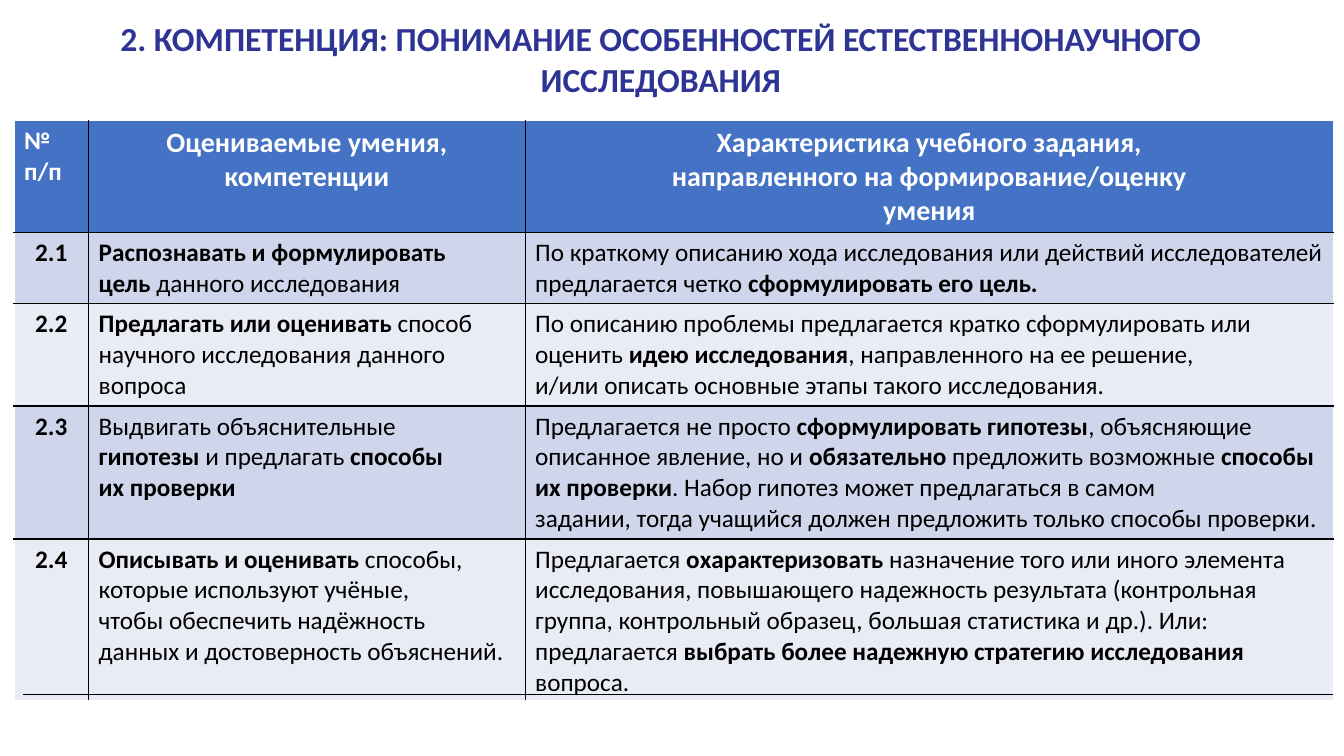
import lxml.etree
import pptx
import pptx.dml.color
import pptx.enum.text
import pptx.oxml.ns
import pptx.util

Pt = pptx.util.Pt
RGBColor = pptx.dml.color.RGBColor
Align = pptx.enum.text.PP_ALIGN
qn = pptx.oxml.ns.qn

INDIGO = RGBColor(0x2D, 0x34, 0x94)
HEADER_BLUE = RGBColor(0x44, 0x72, 0xC4)
BAND_DARK = RGBColor(0xCF, 0xD5, 0xEA)
BAND_LIGHT = RGBColor(0xE9, 0xEB, 0xF5)
WHITE = RGBColor(0xFF, 0xFF, 0xFF)
BLACK = RGBColor(0, 0, 0)

TITLE = "2. КОМПЕТЕНЦИЯ: ПОНИМАНИЕ ОСОБЕННОСТЕЙ ЕСТЕСТВЕННОНАУЧНОГО ИССЛЕДОВАНИЯ"
COLUMN_WIDTHS = [53.3, 311.8, 577.4]
ROW_HEIGHTS = [80, 51, 73, 95, 111]
HEADER = [
    "**№ п/п**",
    "**Оцениваемые умения,**\n**компетенции**",
    "**Характеристика учебного задания,**\n"
    "**направленного на формирование/оценку**\n**умения**",
]
SKILLS = [
    ["**2.1**",
     "**Распознавать и формулировать**\n**цель **данного исследования",
     "По краткому описанию хода исследования или действий исследователей "
     "предлагается четко **сформулировать его цель.**"],
    ["**2.2**",
     "**Предлагать или оценивать **способ\nнаучного исследования данного\nвопроса",
     "По описанию проблемы предлагается кратко сформулировать или оценить "
     "**идею исследования**, направленного на ее решение,\n"
     "и/или описать основные этапы такого исследования."],
    ["**2.3**",
     "Выдвигать объяснительные\n**гипотезы **и предлагать **способы**\n**их проверки**",
     "Предлагается не просто **сформулировать гипотезы**, объясняющие описанное "
     "явление, но и **обязательно** предложить возможные **способы**\n"
     "**их проверки**. Набор гипотез может предлагаться в самом\n"
     "задании, тогда учащийся должен предложить только способы проверки."],
    ["**2.4**",
     "**Описывать и оценивать **способы,\nкоторые используют учёные,\n"
     "чтобы обеспечить надёжность\nданных и достоверность объяснений.",
     "Предлагается **охарактеризовать** назначение того или иного элемента "
     "исследования, повышающего надежность результата (контрольная группа, "
     "контрольный образец, большая статистика и др.). Или: предлагается "
     "**выбрать более надежную стратегию исследования **вопроса."],
]


def write_text(frame, text, *, font, size, color, align=Align.LEFT):
    for index, line in enumerate(text.split("\n")):
        para = frame.add_paragraph() if index else frame.paragraphs[0]
        para.alignment = align
        for position, part in enumerate(line.split("**")):
            if part:
                span = para.add_run()
                span.text = part
                span.font.name = font
                span.font.size = Pt(size)
                span.font.bold = position % 2 == 1
                span.font.color.rgb = color


class Page:
    font = "Calibri"
    line_width = 1

    def __init__(self, deck):
        self.slide = deck.slides.add_slide(deck.slide_layouts[6])

    def title(self, text, left, top, width, height):
        box = self.slide.shapes.add_textbox(Pt(left), Pt(top), Pt(width), Pt(height))
        box.text_frame.word_wrap = True
        write_text(box.text_frame, f"**{text}**", font=self.font, size=24,
                   color=INDIGO, align=Align.CENTER)

    def table(self, rows, left, top, widths, heights):
        table = self.slide.shapes.add_table(
            len(rows), len(widths), Pt(left), Pt(top),
            Pt(sum(widths)), Pt(sum(heights))).table
        for column, width in zip(table.columns, widths):
            column.width = Pt(width)
        for row, height in zip(table.rows, heights):
            row.height = Pt(height)
        last_row, last_column = len(rows) - 1, len(widths) - 1
        for r, texts in enumerate(rows):
            for c, text in enumerate(texts):
                cell = table.cell(r, c)
                outer_edges = {"L": c == 0, "R": c == last_column,
                               "T": r == 0, "B": r == last_row}
                self.borders(cell, outer_edges)
                cell.fill.solid()
                band = BAND_DARK if r % 2 else BAND_LIGHT
                cell.fill.fore_color.rgb = band if r else HEADER_BLUE
                centered = (r == 0) != (c == 0)
                write_text(cell.text_frame, text, font=self.font,
                           size=20 if r == 0 and c else 18,
                           color=BLACK if r else WHITE,
                           align=Align.CENTER if centered else Align.LEFT)

    def borders(self, cell, outer_edges):
        properties = cell._tc.get_or_add_tcPr()
        for side, outer in outer_edges.items():
            edge = lxml.etree.SubElement(properties, qn(f"a:ln{side}"),
                                         w=str(Pt(self.line_width)))
            fill = lxml.etree.SubElement(edge, qn("a:solidFill"))
            lxml.etree.SubElement(fill, qn("a:srgbClr"),
                                  val=str(WHITE if outer else BLACK))

    def line(self, left, top, right, bottom):
        connector = self.slide.shapes.add_connector(
            pptx.enum.shapes.MSO_CONNECTOR.STRAIGHT,
            Pt(left), Pt(top), Pt(right), Pt(bottom))
        connector.line.color.rgb = BLACK
        connector.line.width = Pt(self.line_width)
        lxml.etree.SubElement(connector._element.spPr, qn("a:effectLst"))


def main():
    deck = pptx.Presentation()
    deck.slide_width, deck.slide_height = Pt(960), Pt(540)
    page = Page(deck)
    page.title(TITLE, -8, 9.5, 960, 57.5)
    page.table([HEADER] + SKILLS, 10, 86, COLUMN_WIDTHS, ROW_HEIGHTS)
    page.line(16.5, 496, 952.5, 496)
    deck.save("out.pptx")


if __name__ == "__main__":
    main()
